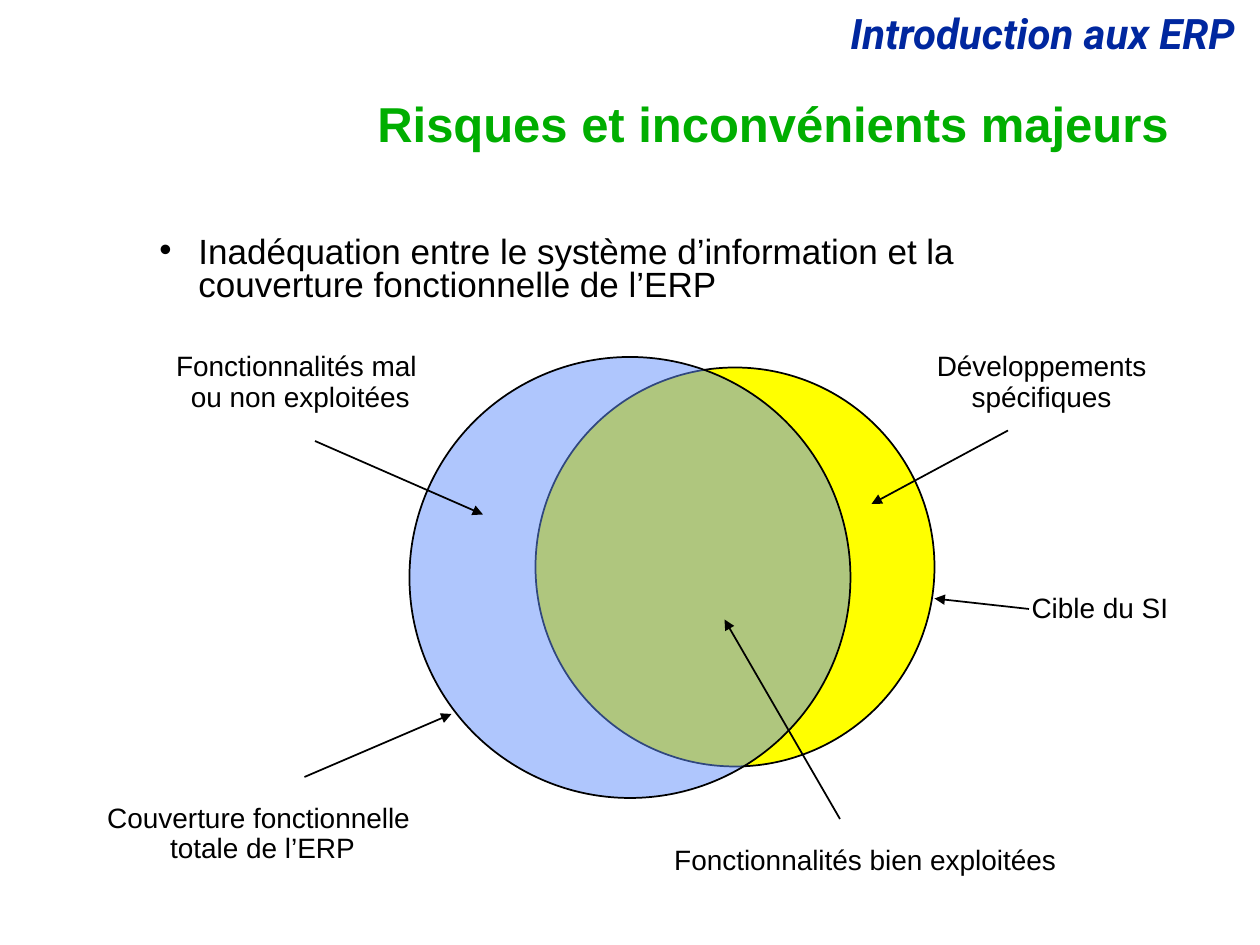
from dataclasses import dataclass
from lxml.etree import SubElement
from pptx import Presentation
from pptx.dml.color import RGBColor
from pptx.enum.shapes import MSO_CONNECTOR, MSO_SHAPE
from pptx.enum.text import MSO_ANCHOR, MSO_AUTO_SIZE, PP_ALIGN
from pptx.oxml.ns import qn
from pptx.util import Inches, Pt


@dataclass(frozen=True)
class Theme:
    font: str = "Arial"
    header_font: str = "Roboto"
    navy: str = "00279F"
    green: str = "00AE00"
    black: str = "000000"
    yellow: str = "FFFF00"
    blue: str = "618FFD"
    header: int = 24
    title: int = 28
    body: int = 20
    label: int = 16
    line: int = 1


T = Theme()
COLS, ROWS = 120, 90
UNIT = Inches(10) // COLS  # square grid cell, a twelfth of an inch


def grid(*cells):
    return [round(c * UNIT) for c in cells]


def write(shape, text, size=T.label, color=T.black, font=T.font, bold=False,
          italic=False, align=PP_ALIGN.CENTER, spacing=0.9, wrap=True,
          anchor=MSO_ANCHOR.TOP):
    """Fill a shape with one formatted paragraph; newlines become line breaks."""
    tf = shape.text_frame
    tf.word_wrap = wrap
    tf.auto_size = MSO_AUTO_SIZE.NONE
    tf.vertical_anchor = anchor
    p = tf.paragraphs[0]
    p.alignment, p.line_spacing = align, spacing
    for i, line in enumerate(text.split("\n")):
        if i:
            p.add_line_break()
        r = p.add_run()
        r.text = line
        f = r.font
        f.name, f.size, f.bold, f.italic = font, Pt(size), bold, italic
        f.color.rgb = RGBColor.from_string(color)
    return p


def add_circle(s, x, y, d, color, alpha=None):
    sp = s.shapes.add_shape(MSO_SHAPE.OVAL, *grid(x, y, d, d))
    sp.shadow.inherit = False
    sp.fill.solid()
    sp.fill.fore_color.rgb = RGBColor.from_string(color)
    sp.line.color.rgb = RGBColor.from_string(T.black)
    sp.line.width = Pt(T.line)
    if alpha is not None:
        clr = sp.fill._xPr.find(".//" + qn("a:srgbClr"))
        SubElement(clr, qn("a:alpha"), val=str(alpha * 1000))


def add_arrow(s, start, end):
    c = s.shapes.add_connector(MSO_CONNECTOR.STRAIGHT, *grid(*start, *end))
    c.line.color.rgb = RGBColor.from_string(T.black)
    c.line.width = Pt(T.line)
    SubElement(c.line._get_or_add_ln(), qn("a:tailEnd"), type="triangle")
    SubElement(c._element.spPr, qn("a:effectLst"))


def add_header(s, x, y, w, h):
    write(s.shapes.add_textbox(*grid(x, y, w, h)), "Introduction aux ERP",
          size=T.header, color=T.navy, font=T.header_font, bold=True,
          italic=True, align=PP_ALIGN.RIGHT)


def add_title(s, x, y, w, h):
    title = s.shapes.title
    title.left, title.top, title.width, title.height = grid(x, y, w, h)
    write(title, "Risques et inconvénients majeurs", size=T.title,
          color=T.green, bold=True, align=PP_ALIGN.RIGHT,
          anchor=MSO_ANCHOR.MIDDLE)


def add_bullet(s, x, y, w, h):
    p = write(s.shapes.add_textbox(*grid(x, y, w, h)),
              "Inadéquation entre le système d’information et la "
              "couverture fonctionnelle de l’ERP",
              size=T.body, align=PP_ALIGN.LEFT, spacing=0.8)
    pPr = p._p.get_or_add_pPr()
    pPr.set("marL", str(Inches(0.31)))
    pPr.set("indent", str(-Inches(0.31)))
    SubElement(pPr, qn("a:buFont"), typeface=T.font)
    SubElement(pPr, qn("a:buChar"), char="•")


def add_venn(s, x, y):
    """Two overlapping circles with labels and arrows, measured from (x, y)."""
    # Circles: target system below, translucent ERP coverage above
    add_circle(s, x + 42, y + 2, 38, T.yellow)
    add_circle(s, x + 30, y + 1, 42, T.blue, alpha=50)

    # Labels: text, left, top, width, height; arrow start and end
    callouts = [
        ("Cible du SI", (88, 23, 15.5, 4), (89, 25), (80, 24)),
        ("Couverture fonctionnelle \ntotale de l’ERP", (0, 43, 32, 7),
         (20, 41), (34, 35)),
        ("Fonctionnalités mal \nou non exploitées", (6.5, 0, 26.2, 7),
         (21, 9), (37, 16)),
        ("Développements\nspécifiques", (79, 0, 22.4, 7), (87, 8), (74, 15)),
        ("Fonctionnalités bien exploitées", (54, 47, 38.8, 4),
         (71, 45), (60, 26)),
    ]
    for text, (left, top, w, h), (x1, y1), (x2, y2) in callouts:
        box = s.shapes.add_textbox(*grid(x + left, y + top, w, h))
        write(box, text, wrap=False)
        add_arrow(s, (x + x1, y + y1), (x + x2, y + y2))


def main():
    prs = Presentation()
    prs.slide_width, prs.slide_height = grid(COLS, ROWS)
    s = prs.slides.add_slide(prs.slide_layouts[5])
    add_header(s, 27.8, 0.7, 91, 5.5)
    add_title(s, 17.5, 9.1, 95, 6)
    add_bullet(s, 14, 22, 94, 6)
    add_venn(s, 9, 33)
    prs.save("out.pptx")


if __name__ == "__main__":
    main()
